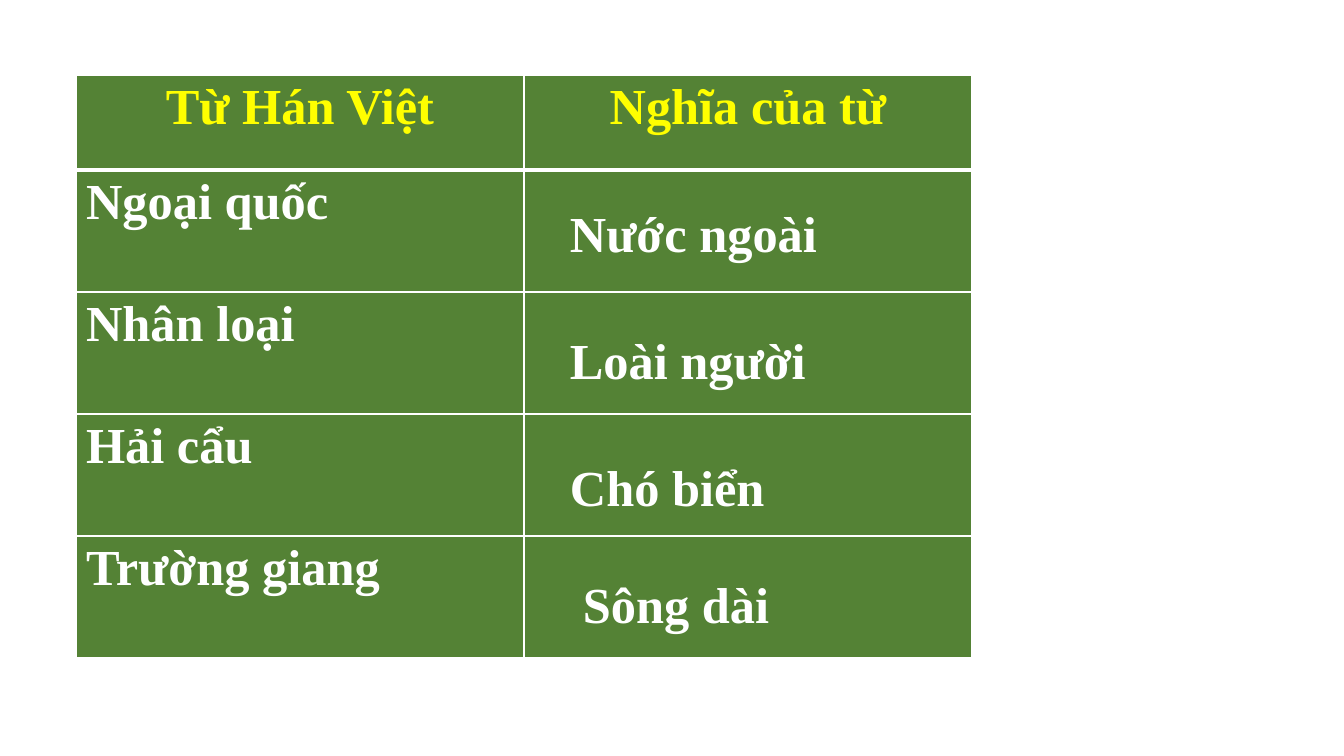
from lxml import etree
from pptx import Presentation
from pptx import util as u
from pptx.dml.color import RGBColor
from pptx.enum import text
from pptx.oxml.ns import qn

HEADERS = ["Từ Hán Việt", "Nghĩa của từ"]
WORDS = ["Ngoại quốc", "Nhân loại", "Hải cẩu", "Trường giang"]
# meaning, left, top, width
MEANINGS = [
    ("Nước ngoài", 560, 197, 270),
    ("Loài người", 560, 324, 259),
    ("Chó biển", 560, 451, 217),
    ("Sông dài", 573, 568, 209),
]

GREEN = RGBColor(0x54, 0x82, 0x35)
YELLOW = RGBColor(0xFF, 0xFF, 0x00)
WHITE = RGBColor(0xFF, 0xFF, 0xFF)

SLIDE_W, SLIDE_H = 1344, 756
TABLE_LEFT, TABLE_TOP = 76, 75
COLUMN_W, HEADER_H, ROW_H = 448, 95, 122
MEANING_H = 72


def px(length):
    return u.Emu(round(length * 914400 / 100.8))


def write(frame, content, color=WHITE, align=text.PP_ALIGN.LEFT):
    para = frame.paragraphs[0]
    para.alignment = align
    span = para.add_run()
    span.text = content
    span.font.name = "Times New Roman"
    span.font.size = u.Pt(36)
    span.font.bold = True
    span.font.color.rgb = color


def style_cell(cell, bottom=1):
    """Give the cell white borders, with the bottom width in points, and a green fill."""
    properties = cell._tc.get_or_add_tcPr()
    for side, width in (("L", 1), ("R", 1), ("T", 1), ("B", bottom)):
        line = etree.SubElement(properties, qn(f"a:ln{side}"), w=str(u.Pt(width)))
        fill = etree.SubElement(line, qn("a:solidFill"))
        etree.SubElement(fill, qn("a:srgbClr"), val=str(WHITE))
    cell.fill.solid()
    cell.fill.fore_color.rgb = GREEN


def add_word_table(page):
    heights = [HEADER_H] + [ROW_H] * len(WORDS)
    table = page.shapes.add_table(
        len(heights), len(HEADERS), px(TABLE_LEFT), px(TABLE_TOP),
        px(COLUMN_W * len(HEADERS)), px(sum(heights))).table
    for column in table.columns:
        column.width = px(COLUMN_W)
    for index, height in enumerate(heights):
        table.rows[index].height = px(height)
        for cell in table.rows[index].cells:
            style_cell(cell, bottom=3 if index == 0 else 1)
    for index, header in enumerate(HEADERS):
        write(table.cell(0, index).text_frame, header, color=YELLOW,
              align=text.PP_ALIGN.CENTER)
    for index, word in enumerate(WORDS, start=1):
        write(table.cell(index, 0).text_frame, word)


def add_meaning(page, meaning, left, top, width):
    box = page.shapes.add_textbox(px(left), px(top), px(width), px(MEANING_H))
    box.text_frame.word_wrap = False
    box.text_frame.auto_size = text.MSO_AUTO_SIZE.SHAPE_TO_FIT_TEXT
    write(box.text_frame, meaning)


def main():
    deck = Presentation()
    deck.slide_width, deck.slide_height = px(SLIDE_W), px(SLIDE_H)
    page = deck.slides.add_slide(deck.slide_layouts[6])
    add_word_table(page)
    for entry in MEANINGS:
        add_meaning(page, *entry)
    deck.save("out.pptx")


if __name__ == "__main__":
    main()
